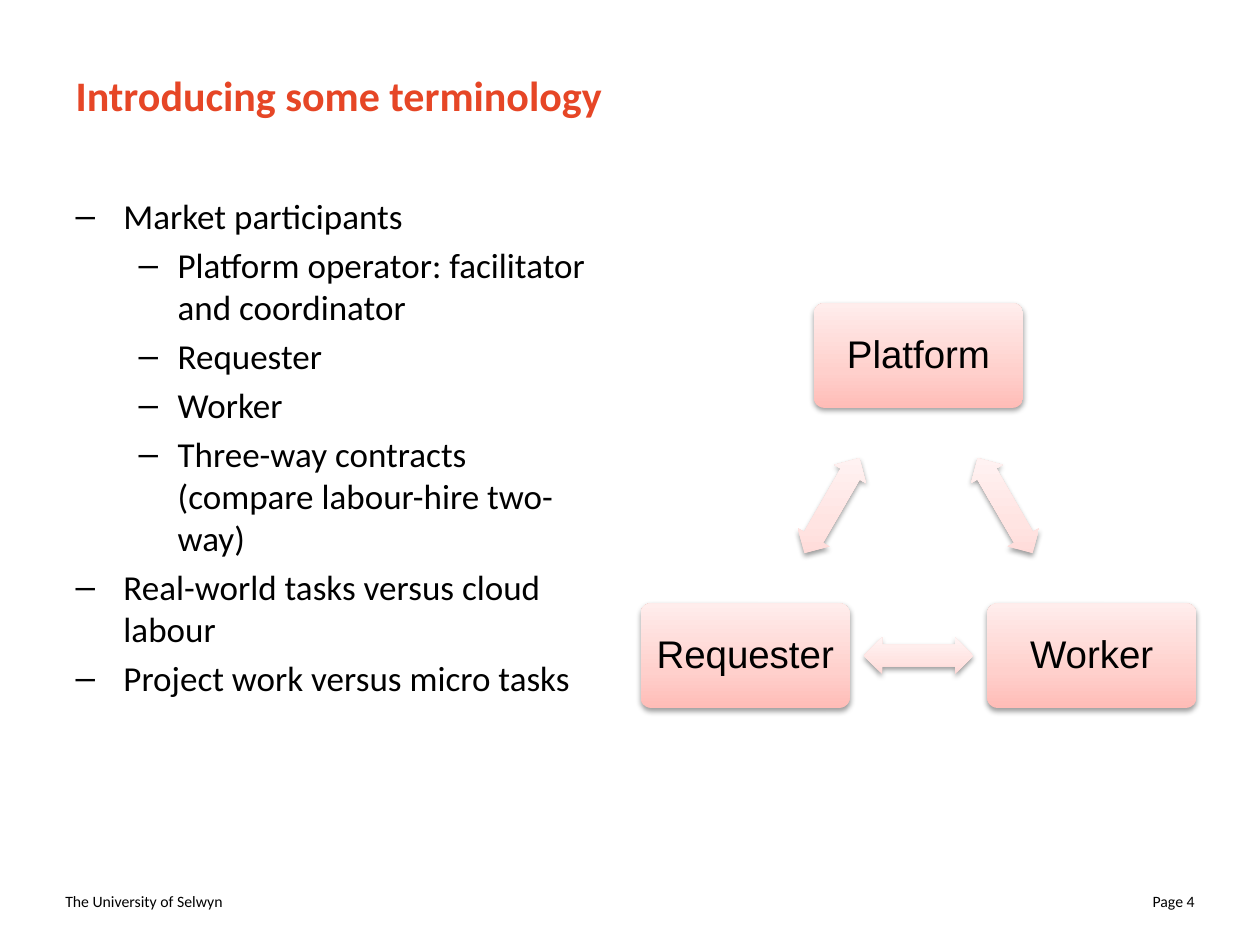
import math
from dataclasses import dataclass

import lxml.etree
import pptx
import pptx.dml.color
import pptx.enum.shapes
import pptx.enum.text
import pptx.oxml
import pptx.oxml.ns
import pptx.util

ALIGN = pptx.enum.text.PP_ALIGN
SHAPE = pptx.enum.shapes.MSO_SHAPE
WIDTH, HEIGHT = 10, 7.5


@dataclass(frozen=True)
class Theme:
    heading: str = "E64626"
    ink: str = "000000"
    box_stops: tuple = ((0, "FFBCB7"), (35, "FFD0CC"), (100, "FFEDEC"))
    arrow_stops: tuple = ((0, "FFD9D7"), (35, "FFE4E2"), (100, "FFF4F4"))
    text_font: str = "Calibri"
    diagram_font: str = "Arial"
    title_size: int = 24
    body_size: int = 20
    diagram_size: int = 22
    footer_size: int = 9


@dataclass(frozen=True)
class Item:
    text: str
    level: int = 0


@dataclass(frozen=True)
class Triangle:
    """Equilateral ring of boxes; the middle is a share of the slide's size."""
    middle_x: float = 0.729
    middle_y: float = 0.588
    side: float = 2.75
    labels: tuple = ("Platform", "Worker", "Requester")

    def corner(self, index: int) -> tuple[float, float]:
        angle = math.radians(120 * index - 90)
        radius = self.side / math.sqrt(3)
        return (self.middle_x * WIDTH + radius * math.cos(angle),
                self.middle_y * HEIGHT + radius * math.sin(angle))


THEME = Theme()
INDENTS = ((0.38, -0.38), (0.81, -0.31))  # left margin and hanging indent by level
ITEMS = (
    Item("Market participants"),
    Item("Platform operator: facilitator and coordinator", 1),
    Item("Requester", 1),
    Item("Worker", 1),
    Item("Three-way contracts (compare labour-hire two-way)", 1),
    Item("Real-world tasks versus cloud labour"),
    Item("Project work versus micro tasks"),
)


def place(shape, left: float, top: float, width: float, height: float) -> None:
    """Position a shape by shares of the slide's size."""
    shape.left, shape.width = (pptx.util.Inches(share * WIDTH) for share in (left, width))
    shape.top, shape.height = (pptx.util.Inches(share * HEIGHT) for share in (top, height))


def write(para, text: str, *, size: int, font: str = THEME.text_font,
          color: str = THEME.ink, bold: bool = False, align=ALIGN.LEFT) -> None:
    para.alignment = align
    span = para.add_run()
    span.text = text
    span.font.size = pptx.util.Pt(size)
    span.font.name = font
    span.font.bold = bold
    span.font.color.rgb = pptx.dml.color.RGBColor.from_string(color)


def prepare(frame, anchor=pptx.enum.text.MSO_ANCHOR.MIDDLE) -> None:
    frame.word_wrap = True
    frame.auto_size = pptx.enum.text.MSO_AUTO_SIZE.NONE
    frame.vertical_anchor = anchor


def add_bullet(para, level: int) -> None:
    para.level = level
    para.space_before = pptx.util.Pt(THEME.body_size * 0.2)
    properties = para._p.get_or_add_pPr()
    margin, indent = INDENTS[level]
    properties.set("marL", str(pptx.util.Inches(margin)))
    properties.set("indent", str(pptx.util.Inches(indent)))
    bullet = lxml.etree.SubElement(properties, pptx.oxml.ns.qn("a:buChar"))
    bullet.set("char", "–")


def style(shape, stops: tuple) -> None:
    """Give a shape an upright gradient, no line and a soft drop shadow."""
    shape.line.fill.background()
    space = pptx.oxml.ns.nsdecls("a")
    marks = "".join(f'<a:gs pos="{share * 1000}"><a:srgbClr val="{color}"/></a:gs>'
                    for share, color in stops)
    gradient = pptx.oxml.parse_xml(
        f'<a:gradFill {space} rotWithShape="0"><a:gsLst>{marks}</a:gsLst>'
        '<a:lin ang="16200000" scaled="0"/></a:gradFill>')
    shadow = pptx.oxml.parse_xml(
        f'<a:effectLst {space}><a:outerShdw blurRad="39370" dist="20320" dir="5400000" '
        'rotWithShape="0"><a:srgbClr val="000000"><a:alpha val="38000"/></a:srgbClr>'
        '</a:outerShdw></a:effectLst>')
    properties = shape._element.spPr
    properties.find(pptx.oxml.ns.qn("a:prstGeom")).addnext(gradient)
    properties.find(pptx.oxml.ns.qn("a:ln")).addnext(shadow)


def add_centred(page, kind, centre: tuple[float, float], width: float, height: float,
                adjustments: tuple, stops: tuple):
    x, y = centre
    shape = page.shapes.add_shape(kind, *map(
        pptx.util.Inches, (x - width / 2, y - height / 2, width, height)))
    for index, value in enumerate(adjustments):
        shape.adjustments[index] = value
    style(shape, stops)
    return shape


def add_triangle(page, triangle: Triangle) -> None:
    for index, label in enumerate(triangle.labels):
        start, end = triangle.corner(index), triangle.corner(index + 1)
        # Labelled box on the corner
        box = add_centred(page, SHAPE.ROUNDED_RECTANGLE, start, 1.66, 0.83,
                          (0.1,), THEME.box_stops)
        prepare(box.text_frame)
        write(box.text_frame.paragraphs[0], label, size=THEME.diagram_size,
              font=THEME.diagram_font, align=ALIGN.CENTER)
        box.text_frame.paragraphs[0].line_spacing = 0.9
        # Arrow halfway to the next corner
        halfway = ((start[0] + end[0]) / 2, (start[1] + end[1]) / 2)
        arrow = add_centred(page, SHAPE.LEFT_RIGHT_ARROW, halfway, 0.87, 0.29,
                            (0.6, 0.5), THEME.arrow_stops)
        arrow.rotation = 60 + 120 * index


def add_footer(page, text: str, left: float, align) -> None:
    box = page.shapes.add_textbox(0, 0, 0, 0)
    place(box, left, 0.927, 0.233, 0.053)
    prepare(box.text_frame)
    write(box.text_frame.paragraphs[0], text, size=THEME.footer_size, align=align)


def main() -> None:
    deck = pptx.Presentation()
    deck.slide_width = pptx.util.Inches(WIDTH)
    deck.slide_height = pptx.util.Inches(HEIGHT)
    page = deck.slides.add_slide(deck.slide_layouts[1])

    # Title
    title = page.shapes.title
    place(title, 0.05, 0.017, 0.9, 0.167)
    prepare(title.text_frame)
    write(title.text_frame.paragraphs[0], "Introducing some terminology",
          size=THEME.title_size, color=THEME.heading, bold=True)

    # Bulleted list
    body = page.placeholders[1]
    place(body, 0.05, 0.199, 0.442, 0.66)
    frame = body.text_frame
    prepare(frame, pptx.enum.text.MSO_ANCHOR.TOP)
    for index, item in enumerate(ITEMS):
        para = frame.add_paragraph() if index else frame.paragraphs[0]
        add_bullet(para, item.level)
        write(para, item.text, size=THEME.body_size)

    # Diagram and footer
    add_triangle(page, Triangle())
    add_footer(page, "The University of Selwyn", 0.042, ALIGN.LEFT)
    add_footer(page, "Page 4", 0.725, ALIGN.RIGHT)
    deck.save("out.pptx")


if __name__ == "__main__":
    main()
